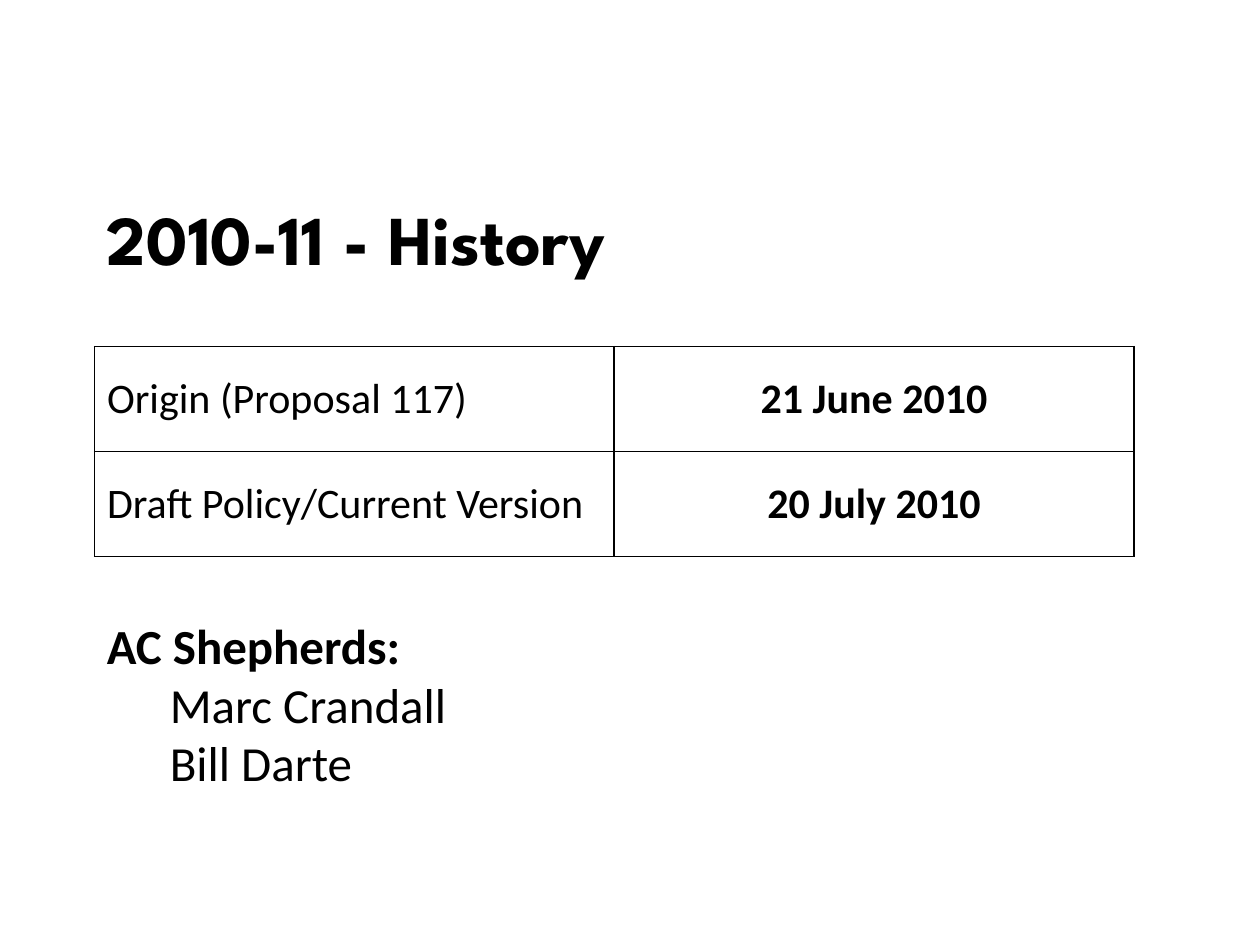
from pptx import Presentation
from pptx.dml.color import RGBColor
from pptx.enum.text import MSO_ANCHOR as Anchor, MSO_AUTO_SIZE as AutoSize, PP_ALIGN as Align
from pptx.oxml import parse_xml
from pptx.oxml.ns import nsdecls
from pptx.util import Inches, Pt

BLACK = RGBColor(0, 0, 0)
WHITE = RGBColor(255, 255, 255)
COLS, ROWS = 120, 90


class Deck:
    heading_font = "League Spartan"
    body_font = "Calibri"

    def __init__(self):
        self.prs = Presentation()
        self.prs.slide_width, self.prs.slide_height = Inches(10), Inches(7.5)
        self.s = self.prs.slides.add_slide(self.prs.slide_layouts[6])
        self.s.background.fill.solid()
        self.s.background.fill.fore_color.rgb = WHITE

    def box(self, col, row, cols, rows):
        w, h = self.prs.slide_width / COLS, self.prs.slide_height / ROWS
        return int(col * w), int(row * h), int(cols * w), int(rows * h)

    def run(self, p, text, size, bold=False, font=body_font):
        r = p.add_run()
        r.text = text
        r.font.name, r.font.size, r.font.bold = font, Pt(size), bold
        r.font.color.rgb = BLACK

    def frame(self, *area):
        tf = self.s.shapes.add_textbox(*self.box(*area)).text_frame
        tf.word_wrap = True
        return tf

    def title(self, text, *area):
        tf = self.frame(*area)
        tf.vertical_anchor = Anchor.MIDDLE
        self.run(tf.paragraphs[0], text, 40, True, self.heading_font)

    def name_list(self, heading, names, *area):
        tf = self.frame(*area)
        tf.auto_size = AutoSize.SHAPE_TO_FIT_TEXT
        self.run(tf.paragraphs[0], heading, 28, True)
        for name in names:
            p = tf.add_paragraph()
            p._p.get_or_add_pPr().set("marL", str(Inches(0.5)))
            self.run(p, name, 28)

    def border(self, cell):
        tcPr = cell._tc.get_or_add_tcPr()
        for i, side in enumerate(("lnL", "lnR", "lnT", "lnB")):
            tcPr.insert(i, parse_xml(
                f'<a:{side} {nsdecls("a")} w="{Pt(1)}"><a:solidFill>'
                f'<a:srgbClr val="{BLACK}"/></a:solidFill></a:{side}>'))

    def history(self, rows, *area):
        table = self.s.shapes.add_table(len(rows), 2, *self.box(*area)).table
        table.first_row = table.horz_banding = False
        for i, row in enumerate(rows):
            for j, text in enumerate(row):
                cell = table.cell(i, j)
                cell.vertical_anchor = Anchor.MIDDLE
                cell.fill.solid()
                cell.fill.fore_color.rgb = WHITE
                self.border(cell)
                p = cell.text_frame.paragraphs[0]
                p.alignment = Align.CENTER if j else Align.LEFT
                self.run(p, text, 24, bold=j == 1)


def main():
    deck = Deck()
    deck.history([("Origin (Proposal 117)", "21 June 2010"),
                  ("Draft Policy/Current Version", "20 July 2010")], 9, 33, 99, 20)
    deck.name_list("AC Shepherds:", ["Marc Crandall", "Bill Darte"], 9, 58, 49, 18)
    deck.title("2010-11 - History", 9, 18, 108, 9.33)
    deck.prs.save("out.pptx")


if __name__ == "__main__":
    main()
